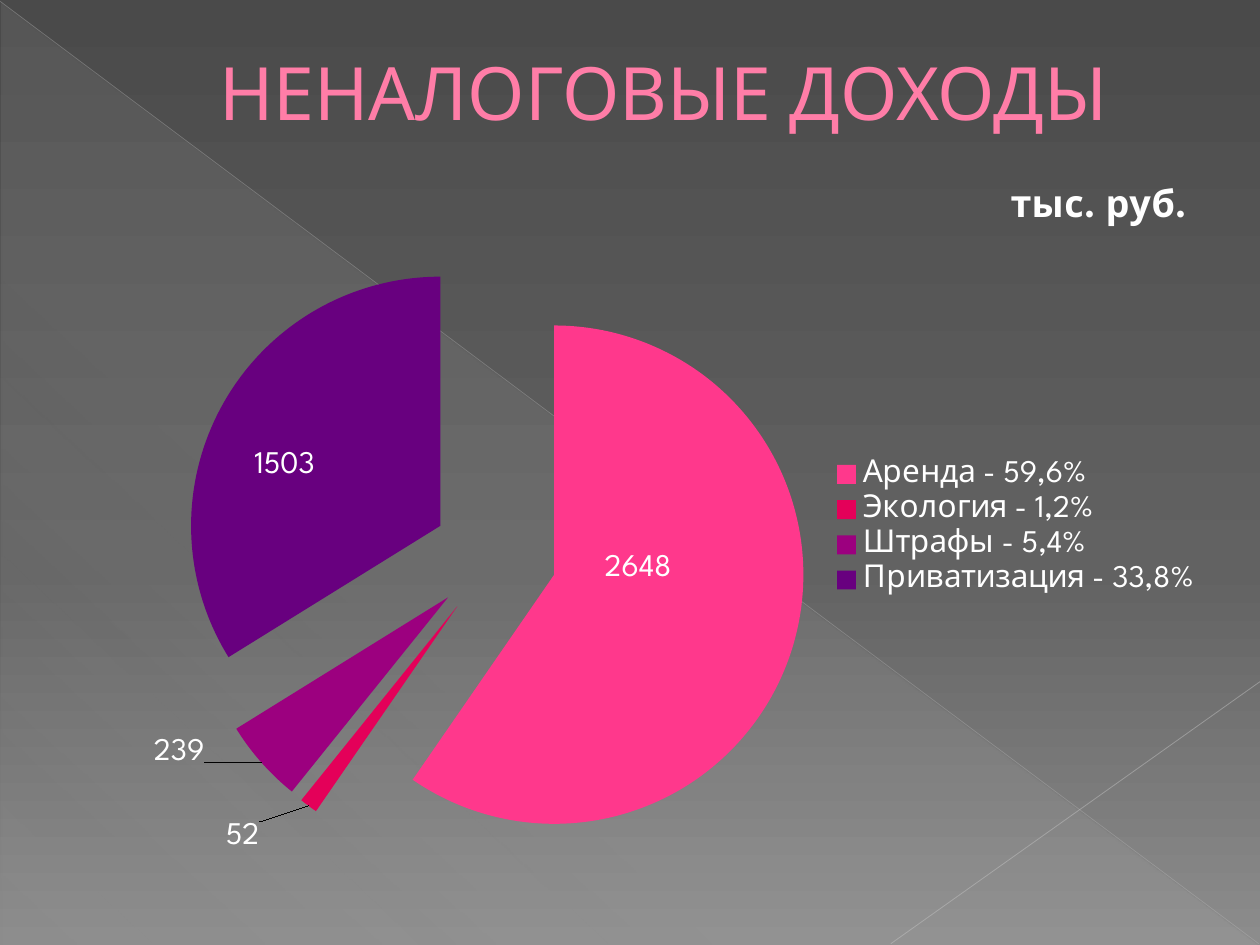
from typing import NamedTuple

import lxml.etree
import pptx
import pptx.chart.data
import pptx.dml.color
import pptx.enum.chart
import pptx.enum.shapes
import pptx.enum.text
import pptx.oxml
import pptx.oxml.ns
import pptx.util

Inches = pptx.util.Inches
Pt = pptx.util.Pt
RGBColor = pptx.dml.color.RGBColor
qn = pptx.oxml.ns.qn

FONT = "League Spartan"
WHITE = RGBColor(0xFF, 0xFF, 0xFF)
TITLE_PINK = RGBColor(0xFF, 0x7D, 0xA7)
TITLE_EDGE = RGBColor(0xB1, 0x27, 0x61)
PINK = RGBColor(0xFF, 0x38, 0x8C)
CRIMSON = RGBColor(0xE4, 0x00, 0x59)
MAGENTA = RGBColor(0x9C, 0x00, 0x7F)
PURPLE = RGBColor(0x68, 0x00, 0x7F)
DARK_GREY = RGBColor(0x4A, 0x4A, 0x4A)
MID_GREY = RGBColor(0x62, 0x62, 0x62)
LIGHT_GREY = RGBColor(0x8C, 0x8C, 0x8C)
PALE_GREY = RGBColor(0xD2, 0xD2, 0xD2)
LONG_LINE_GREY = RGBColor(0xBF, 0xBF, 0xBF)
SHORT_LINE_GREY = RGBColor(0xC6, 0xC6, 0xC6)


class Stop(NamedTuple):
    position: int
    color: RGBColor
    opacity: int = 100


class Ray(NamedTuple):
    start: tuple[float, float]
    end: tuple[float, float]
    color: RGBColor
    width: float
    opacity: int


class Income(NamedTuple):
    name: str
    amount: int
    color: RGBColor
    label_shift: tuple[float, float]


RAYS = [
    Ray((0, 0.01), (9.99, 7.49), LONG_LINE_GREY, 0.39, 35),
    Ray((10, 5.41), (7.07, 7.49), SHORT_LINE_GREY, 0.47, 45),
]
INCOMES = [
    Income("Аренда - 59,6%", 2648, PINK, (-0.03, -0.06)),
    Income("Экология - 1,2%", 52, CRIMSON, (-0.12, 0.18)),
    Income("Штрафы - 5,4%", 239, MAGENTA, (-0.15, 0.1)),
    Income("Приватизация - 33,8%", 1503, PURPLE, (-0.04, 0)),
]


def add_opacity(color_element, opacity: int) -> None:
    if opacity < 100:
        lxml.etree.SubElement(color_element, qn("a:alpha"), val=str(opacity * 1000))


def set_gradient(fill, owner, stops: list[Stop], angle: int) -> None:
    fill.gradient()
    stop_list = owner.find(".//" + qn("a:gsLst"))
    for old_stop in list(stop_list):
        stop_list.remove(old_stop)
    for stop in stops:
        entry = lxml.etree.SubElement(stop_list, qn("a:gs"), pos=str(stop.position * 1000))
        color = lxml.etree.SubElement(entry, qn("a:srgbClr"), val=str(stop.color))
        add_opacity(color, stop.opacity)
    owner.find(".//" + qn("a:lin")).set("ang", str(angle * 60000))


def draw_ray(slide, ray: Ray) -> None:
    line = slide.shapes.add_connector(
        pptx.enum.shapes.MSO_CONNECTOR.STRAIGHT,
        *(Inches(value) for value in ray.start + ray.end),
    )
    line.line.color.rgb = ray.color
    line.line.width = Pt(ray.width)
    properties = line._element.spPr
    add_opacity(properties.find(".//" + qn("a:srgbClr")), ray.opacity)
    lxml.etree.SubElement(properties, qn("a:effectLst"))


def draw_backdrop(slide) -> None:
    set_gradient(
        slide.background.fill,
        slide._element,
        [Stop(0, DARK_GREY), Stop(60, MID_GREY), Stop(100, LIGHT_GREY)],
        90,
    )
    triangle = slide.shapes.add_shape(
        pptx.enum.shapes.MSO_SHAPE.RIGHT_TRIANGLE,
        Inches(0.01), Inches(0.02), Inches(9.98), Inches(7.48),
    )
    set_gradient(
        triangle.fill,
        triangle._element,
        [Stop(0, PALE_GREY, 10), Stop(70, PALE_GREY, 8), Stop(100, PALE_GREY, 1)],
        133,
    )
    triangle.line.fill.background()
    triangle.shadow.inherit = False
    for ray in RAYS:
        draw_ray(slide, ray)


def draw_title(slide) -> None:
    heading = slide.shapes.add_textbox(Inches(0.5), Inches(0.29), Inches(9), Inches(0.86))
    frame = heading.text_frame
    frame.text = "НЕНАЛОГОВЫЕ ДОХОДЫ"
    frame.word_wrap = True
    frame.vertical_anchor = pptx.enum.text.MSO_ANCHOR.MIDDLE
    paragraph = frame.paragraphs[0]
    paragraph.alignment = pptx.enum.text.PP_ALIGN.CENTER
    paragraph._p.get_or_add_pPr().set("marL", str(Inches(0.53)))
    font = paragraph.runs[0].font
    font.name = FONT
    font.size = Pt(42)
    font.color.rgb = TITLE_PINK
    edge = lxml.etree.Element(qn("a:ln"), w=str(Pt(0.5)))
    edge_fill = lxml.etree.SubElement(edge, qn("a:solidFill"))
    lxml.etree.SubElement(edge_fill, qn("a:srgbClr"), val=str(TITLE_EDGE))
    paragraph.runs[0]._r.get_or_add_rPr().insert(0, edge)


def manual_layout(**settings: object):
    layout = pptx.oxml.parse_xml(
        f'<c:layout xmlns:c="{pptx.oxml.ns.nsuri("c")}"><c:manualLayout/></c:layout>'
    )
    for tag, value in settings.items():
        lxml.etree.SubElement(layout[0], qn(f"c:{tag}"), val=str(value))
    return layout


def place(parent, tag: str, layout) -> None:
    for old_layout in parent.findall(qn("c:layout")):
        parent.remove(old_layout)
    parent.find(qn(tag)).addnext(layout)


def draw_income_pie(slide) -> None:
    income_data = pptx.chart.data.CategoryChartData()
    income_data.categories = [income.name for income in INCOMES]
    income_data.add_series("Series 1", [income.amount for income in INCOMES])
    chart = slide.shapes.add_chart(
        pptx.enum.chart.XL_CHART_TYPE.PIE_EXPLODED,
        Inches(0.35), Inches(1.31), Inches(9.29), Inches(5.75), income_data,
    ).chart
    chart.font.name = FONT
    chart.font.size = Pt(18)
    chart.font.color.rgb = WHITE

    chart.has_title = True
    chart.chart_title.text_frame.text = "тыс. руб."
    unit_font = chart.chart_title.text_frame.paragraphs[0].runs[0].font
    unit_font.name = FONT
    unit_font.size = Pt(21.6)
    unit_font.bold = True
    unit_font.color.rgb = WHITE
    place(chart.chart_title._element, "c:tx",
          manual_layout(xMode="edge", yMode="edge", x=0.82, y=0.02))

    chart.has_legend = True
    chart.legend.position = pptx.enum.chart.XL_LEGEND_POSITION.RIGHT
    chart.legend.include_in_layout = False

    pie = chart.plots[0]
    plot_area = pie._element.getparent()
    for old_layout in plot_area.findall(qn("c:layout")):
        plot_area.remove(old_layout)
    plot_area.insert(0, manual_layout(layoutTarget="inner", xMode="edge", yMode="edge",
                                      x=0.01, y=0.11, w=0.75, h=0.86))
    pie.vary_by_categories = True
    slices = pie.series[0]
    center = pptx.enum.chart.XL_LABEL_POSITION.CENTER
    slices.data_labels.show_value = True
    slices.data_labels.position = center
    explosion = slices._element.find(qn("c:explosion"))
    explosion.set("val", "25")
    for index, income in enumerate(INCOMES):
        point = slices.points[index]
        point.format.fill.solid()
        point.format.fill.fore_color.rgb = income.color
        point.data_label.position = center
        label = slices._element.xpath(f"c:dLbls/c:dLbl[c:idx/@val='{index}']")[0]
        shift_x, shift_y = income.label_shift
        place(label, "c:idx", manual_layout(x=shift_x, y=shift_y))


def main() -> None:
    deck = pptx.Presentation()
    deck.slide_width = Inches(10)
    deck.slide_height = Inches(7.5)
    slide = deck.slides.add_slide(deck.slide_layouts[6])
    draw_backdrop(slide)
    draw_title(slide)
    draw_income_pie(slide)
    deck.save("out.pptx")


if __name__ == "__main__":
    main()
